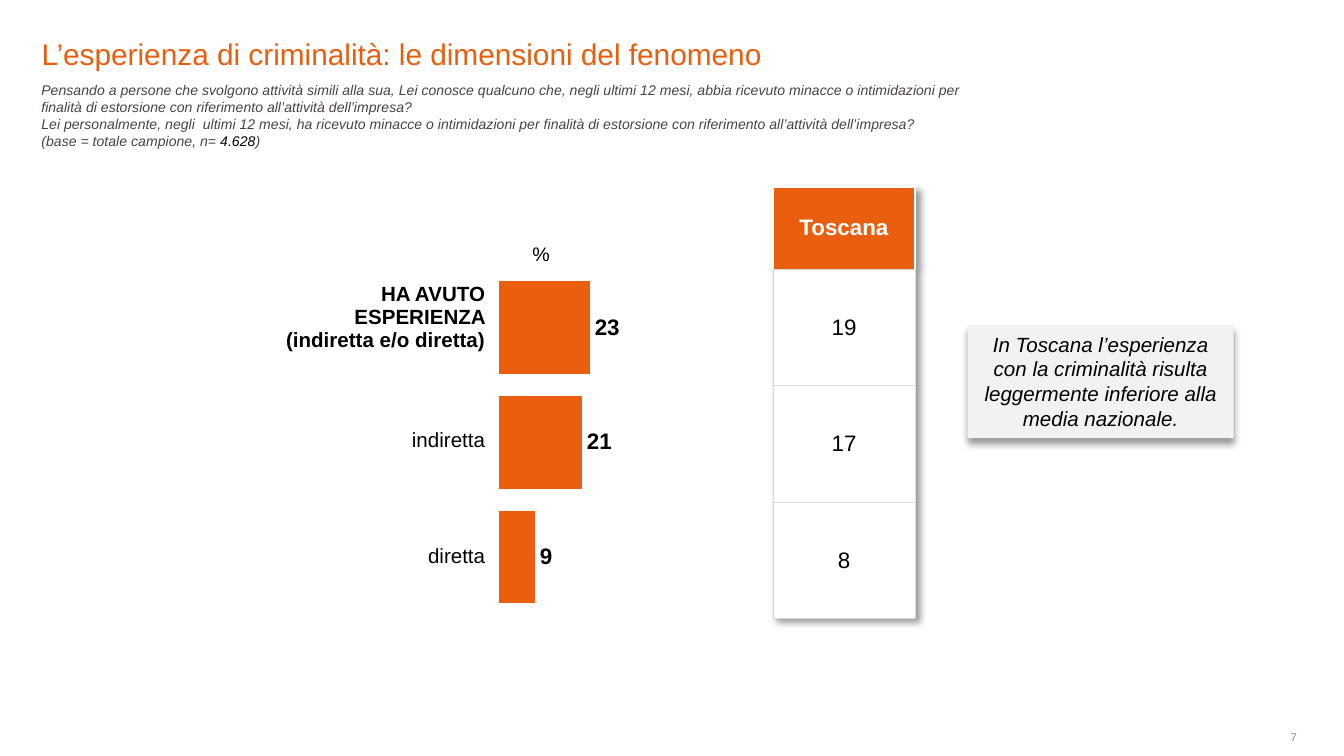
import pptx
import pptx.chart.data
import pptx.dml.color
import pptx.enum.chart
import pptx.enum.shapes
import pptx.enum.text
import pptx.oxml
import pptx.oxml.ns
import pptx.util

Inches = pptx.util.Inches
Align = pptx.enum.text.PP_ALIGN
Anchor = pptx.enum.text.MSO_ANCHOR

THEME = {
    "font": "Arial", "accent": "E95E0F", "ink": "000000", "question": "4A423F",
    "number": "928580", "paper": "FFFFFF", "note": "F2F2F2", "grid": "D9D9D9",
    "title_size": 16, "question_size": 7.5, "unit_size": 10.5, "label_size": 11,
    "value_size": 12, "number_size": 6,
}
TITLE = "L’esperienza di criminalità: le dimensioni del fenomeno"
QUESTIONS = [
    ["Pensando a persone che svolgono attività simili alla sua, Lei conosce qualcuno che, negli ultimi 12 mesi, abbia ricevuto minacce o intimidazioni per finalità di estorsione con riferimento all’attività dell’impresa?"],
    ["Lei personalmente, negli  ultimi 12 mesi, ha ricevuto minacce o intimidazioni per finalità di estorsione con riferimento all’attività dell’impresa?"],
    ["(base = totale campione, n=", " 4.628", ")"],
]
LABELS = ["HA AVUTO ESPERIENZA (indiretta e/o diretta)", "indiretta", "diretta"]
NATIONAL = [23, 21, 9]
REGION = ["Toscana", "19", "17", "8"]
NOTE = "In Toscana l’esperienza con la criminalità risulta leggermente inferiore alla media nazionale."
PAGE_NUMBER = "7"
PAGE_WIDTH = 10


def color(name):
    return pptx.dml.color.RGBColor.from_string(THEME[name])


def style(font, size, ink="ink", bold=False, italic=False):
    font.name = THEME["font"]
    font.size = pptx.util.Pt(THEME[size])
    font.color.rgb = color(ink)
    font.bold, font.italic = bold, italic


def write(frame, paragraphs, size, ink="ink", align=Align.LEFT, anchor=Anchor.TOP,
          inset=None, **face):
    frame.word_wrap = True
    frame.vertical_anchor = anchor
    if inset is not None:
        frame.margin_left = frame.margin_right = Inches(inset)
        frame.margin_top = frame.margin_bottom = Inches(inset)
    for index, spans in enumerate(paragraphs):
        para = frame.paragraphs[0] if index == 0 else frame.add_paragraph()
        para.alignment = align
        for text in spans:
            span = para.add_run()
            span.text = text
            style(span.font, size, ink, **face)


def add_text(page, place, *content, **options):
    box = page.shapes.add_textbox(*map(Inches, place))
    write(box.text_frame, *content, **options)
    return box


def shadow_xml(blur, distance, angle):
    return pptx.oxml.parse_xml(
        f'<a:effectLst {pptx.oxml.ns.nsdecls("a")}>'
        f'<a:outerShdw blurRad="{pptx.util.Pt(blur)}" dist="{pptx.util.Pt(distance)}" '
        f'dir="{angle * 60000}" algn="t" rotWithShape="0">'
        f'<a:srgbClr val="{THEME["ink"]}"><a:alpha val="40000"/></a:srgbClr>'
        '</a:outerShdw></a:effectLst>')


def set_borders(cell, ink, width, **special):
    properties = cell._tc.get_or_add_tcPr()
    for index, side in enumerate("LRTB"):
        line_ink, line_width = special.get(side, (ink, width))
        properties.insert(index, pptx.oxml.parse_xml(
            f'<a:ln{side} {pptx.oxml.ns.nsdecls("a")} w="{pptx.util.Pt(line_width)}">'
            f'<a:solidFill><a:srgbClr val="{THEME[line_ink]}"/></a:solidFill></a:ln{side}>'))


def add_column(page, left, top, width, height, header, rows):
    frame = page.shapes.add_table(rows, 1, *map(Inches, (left, top, width, height)))
    table = frame.table
    table.first_row = table.horz_banding = False
    for index, row in enumerate(table.rows):
        row.height = Inches(header if index == 0 else (height - header) / (rows - 1))
    return table


def fill_cell(cell, text, size, ink, align, bold, fill=None, inset=0.01):
    cell.vertical_anchor = Anchor.MIDDLE
    if inset is not None:
        cell.margin_left = cell.margin_right = cell.margin_top = Inches(inset)
        cell.margin_bottom = 0
    para = cell.text_frame.paragraphs[0]
    para.text = text
    para.alignment = align
    style(para.runs[0].font, size, ink, bold=bold)
    if fill:
        cell.fill.solid()
        cell.fill.fore_color.rgb = color(fill)
    else:
        cell.fill.background()


def add_bars(page):
    data = pptx.chart.data.CategoryChartData(number_format="0")
    data.categories = [str(index + 1) for index in range(len(NATIONAL))]
    data.add_series("Series 1", NATIONAL)
    chart = page.shapes.add_chart(
        pptx.enum.chart.XL_CHART_TYPE.BAR_CLUSTERED,
        *map(Inches, (2.08, 2.01, 5.84, 3.56)), data).chart
    chart.has_legend = chart.has_title = False
    style(chart.font, "value_size")
    chart.category_axis.reverse_order = True
    scale = chart.value_axis
    scale.minimum_scale, scale.maximum_scale, scale.major_unit = 0, 100, 10
    scale.has_major_gridlines = False
    chart.category_axis.visible = scale.visible = False
    plot = chart.plots[0]
    plot.gap_width = 24
    plot.vary_by_categories = False
    fill = plot.series[0].format.fill
    fill.solid()
    fill.fore_color.rgb = color("accent")
    plot.has_data_labels = True
    labels = plot.data_labels
    labels.show_value = True
    labels.number_format, labels.number_format_is_linked = "0", False
    labels.position = pptx.enum.chart.XL_LABEL_POSITION.OUTSIDE_END
    style(labels.font, "value_size", bold=True)
    area = chart._chartSpace.chart.plotArea
    for old in area.findall(pptx.oxml.ns.qn("c:layout")):
        area.remove(old)
    parts = "".join(f'<c:{name} val="{value}"/>' for name, value in [
        ("layoutTarget", "inner"), ("xMode", "edge"), ("yMode", "edge"),
        ("x", 0.28), ("y", 0), ("w", 0.5), ("h", 0.72)])
    area.insert(0, pptx.oxml.parse_xml(
        f'<c:layout {pptx.oxml.ns.nsdecls("c")}><c:manualLayout>{parts}</c:manualLayout></c:layout>'))


def add_label_table(page):
    table = add_column(page, 1.94, 1.87, 1.68, 2.7, 0.97, len(LABELS))
    for index, text in enumerate(LABELS):
        cell = table.cell(index, 0)
        fill_cell(cell, text, "label_size", "ink", Align.RIGHT, index == 0)
        set_borders(cell, "paper", 1, **({"B": ("paper", 3)} if index == 0 else {}))


def add_region_table(page):
    table = add_column(page, 5.75, 1.39, 1.06, 3.21, 0.61, len(REGION))
    for index, text in enumerate(REGION):
        cell = table.cell(index, 0)
        if index == 0:
            fill_cell(cell, text, "value_size", "paper", Align.CENTER, True, "accent", None)
            set_borders(cell, "paper", 1, B=("grid", 0.25))
        else:
            fill_cell(cell, text, "value_size", "ink", Align.CENTER, False, "paper")
            set_borders(cell, "grid", 0.25)
    table._tbl.tblPr.insert(0, shadow_xml(4, 3, 45))


def main():
    deck = pptx.Presentation()
    deck.slide_width, deck.slide_height = Inches(PAGE_WIDTH), Inches(PAGE_WIDTH * 9 / 16)
    page = deck.slides.add_slide(deck.slide_layouts[5])

    title = page.shapes.title
    title.left, title.top, title.width, title.height = map(Inches, (0.31, 0, 6.26, 0.53))
    write(title.text_frame, [[TITLE]], "title_size", "accent", anchor=Anchor.BOTTOM, inset=0)

    number = add_text(page, (8.31, 5.44, 1.34, 0.09), [[PAGE_NUMBER]], "number_size", "number",
                      align=Align.RIGHT, anchor=Anchor.MIDDLE, inset=0)
    number.fill.solid()
    number.fill.fore_color.rgb = color("paper")

    add_bars(page)
    questions = add_text(page, (0.21, 0.56, 7.14, 0.73), QUESTIONS, "question_size", "question",
                         italic=True)
    questions.text_frame.paragraphs[-1].runs[1].font.color.rgb = color("ink")
    add_text(page, (3.16, 1.61, 1.73, 0.55), [["%"]], "unit_size",
             align=Align.CENTER, anchor=Anchor.MIDDLE)
    add_label_table(page)
    add_region_table(page)

    note = page.shapes.add_shape(pptx.enum.shapes.MSO_SHAPE.RECTANGLE,
                                 *map(Inches, (7.2, 2.42, 1.98, 0.84)))
    note.fill.solid()
    note.fill.fore_color.rgb = color("note")
    note.line.fill.background()
    note._element.spPr.append(shadow_xml(4, 3, 90))
    write(note.text_frame, [[NOTE]], "label_size", align=Align.CENTER, italic=True)

    deck.save("out.pptx")


if __name__ == "__main__":
    main()
